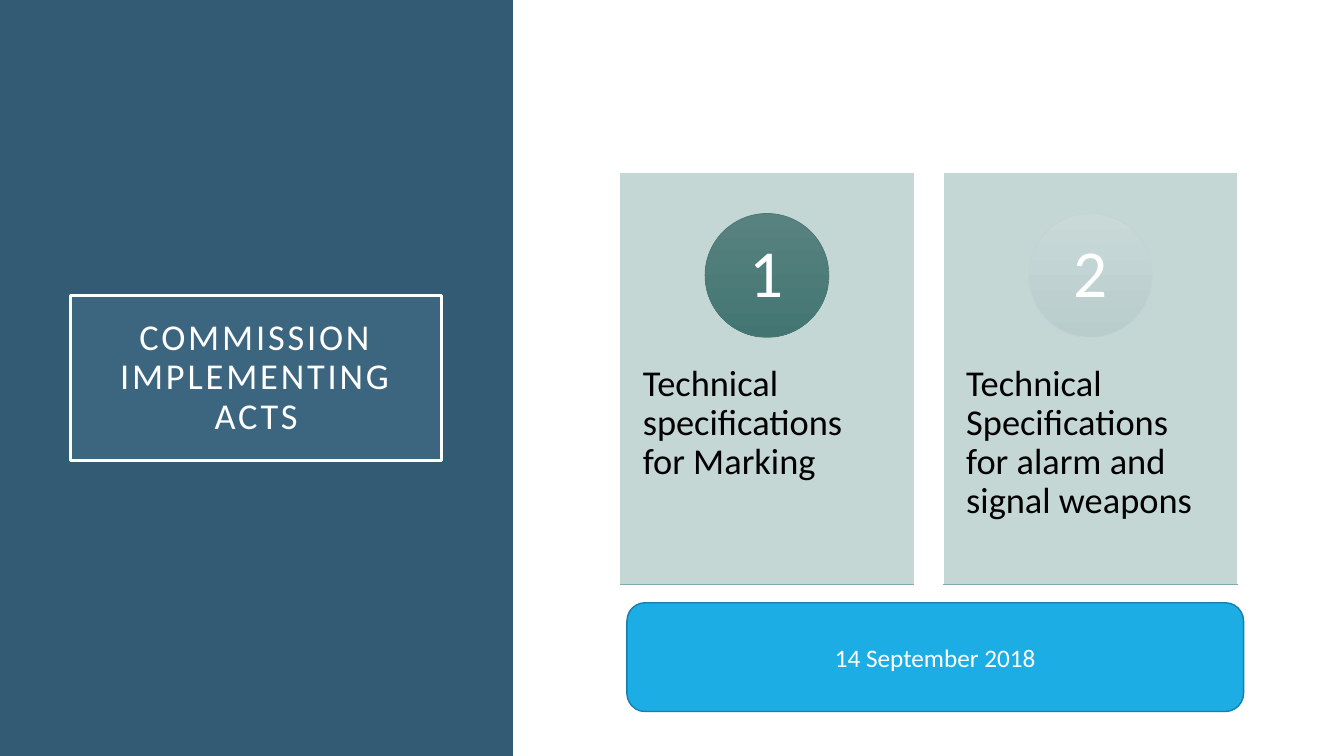
import pptx
import pptx.util
import pptx.dml.color
import pptx.enum.shapes
import pptx.enum.text
import pptx.oxml.ns
from lxml import etree

Cm, Pt = pptx.util.Cm, pptx.util.Pt
RGB = pptx.dml.color.RGBColor
KIND = pptx.enum.shapes.MSO_SHAPE
ALIGN = pptx.enum.text.PP_ALIGN
ANCHOR = pptx.enum.text.MSO_ANCHOR
qn = pptx.oxml.ns.qn

TITLE = "COMMISSION IMPLEMENTING ACTS"
DATE = "14 September 2018"
NAVY = RGB(0x33, 0x5B, 0x74)
STEEL = RGB(0x70, 0xA1, 0xC0)
SAGE = RGB(0xBE, 0xD3, 0xD1)
TEAL = RGB(0x7F, 0xAC, 0xA9)
BLUE = RGB(0x1C, 0xAD, 0xE4)
EDGE = RGB(0x15, 0x80, 0xA9)
WHITE = RGB(0xFF, 0xFF, 0xFF)
BLACK = RGB(0, 0, 0)

# number, text, badge top colour, badge bottom colour, badge outline
CARDS = [
    ("1", "Technical specifications for Marking",
     RGB(0x58, 0x82, 0x7F), RGB(0x43, 0x76, 0x73), RGB(0x49, 0x79, 0x76)),
    ("2", "Technical Specifications for alarm and signal weapons",
     RGB(0xC9, 0xD9, 0xD8), RGB(0xB8, 0xCD, 0xCC), RGB(0xC2, 0xD4, 0xD3)),
]
LEFT, TOP, WIDE, HIGH, STEP = 15.62, 4.34, 7.42, 10.39, 8.15
BADGE, DROP = 3.12, 1.04

deck = pptx.Presentation()
deck.slide_width, deck.slide_height = Cm(33.87), Cm(19.05)
slide = deck.slides.add_slide(deck.slide_layouts[5])


def paint(shape, color, alpha=None):
    """Fill a shape with a colour, see-through if alpha (percent) is given."""
    shape.fill.solid()
    shape.fill.fore_color.rgb = color
    if alpha:
        node = shape.fill._xPr.find(qn("a:solidFill"))[0]
        etree.SubElement(node, qn("a:alpha"), val=str(alpha * 1000))


def edge(shape, color, width):
    shape.line.color.rgb = color
    shape.line.width = Pt(width)


def add(kind, x, y, w, h):
    shape = slide.shapes.add_shape(kind, Cm(x), Cm(y), Cm(w), Cm(h))
    shape.shadow.inherit = False
    return shape


def write(shape, text, size, color, pads, align=ALIGN.CENTER,
          anchor=ANCHOR.MIDDLE, space=0.9):
    """Put one paragraph in a shape; pads are side and top/bottom in cm."""
    frame = shape.text_frame
    frame.word_wrap = True
    frame.auto_size = pptx.enum.text.MSO_AUTO_SIZE.NONE
    frame.vertical_anchor = anchor
    frame.margin_left = frame.margin_right = Cm(pads[0])
    frame.margin_top, frame.margin_bottom = Cm(pads[1]), Cm(pads[-1])
    frame.text = text
    para = frame.paragraphs[0]
    para.alignment, para.line_spacing = align, space
    para.font.name, para.font.size = "Calibri", Pt(size)
    para.font.color.rgb = color
    return para


panel = add(KIND.RECTANGLE, 0, 0, 12.93, 19.05)
paint(panel, NAVY)
panel.line.fill.background()

title = slide.shapes.title
title._element.addprevious(panel._element)
title.left, title.top = Cm(1.78), Cm(7.44)
title.width, title.height = Cm(9.35), Cm(4.17)
paint(title, STEEL, 15)
edge(title, WHITE, 2.5)
para = write(title, TITLE, 26, WHITE, (0.51, 0.51))
para.runs[0].font._element.set("spc", "200")

for i, (num, text, light, dark, rim) in enumerate(CARDS):
    x = LEFT + i * STEP
    card = add(KIND.RECTANGLE, x, TOP, WIDE, HIGH)
    paint(card, SAGE, 90)
    edge(card, WHITE, 0.5)
    write(card, text, 26, BLACK, (0.58, 4.85, 0.91), ALIGN.LEFT, ANCHOR.TOP)

    badge = add(KIND.OVAL, x + (WIDE - BADGE) / 2, TOP + DROP, BADGE, BADGE)
    badge.fill.gradient()
    badge.fill.gradient_angle = 270
    for stop, color in zip(badge.fill.gradient_stops, (light, dark)):
        stop.color.rgb = color
    edge(badge, rim, 0.5)
    write(badge, num, 48, WHITE, (0.25, 0.03))

    base = Cm(TOP + HIGH)
    rule = slide.shapes.add_connector(
        pptx.enum.shapes.MSO_CONNECTOR.STRAIGHT, Cm(x), base, Cm(x + WIDE), base)
    edge(rule, TEAL, 0.5)
    etree.SubElement(rule._element.spPr, qn("a:effectLst"))

banner = add(KIND.ROUNDED_RECTANGLE, 15.8, 15.19, 15.54, 2.74)
paint(banner, BLUE)
edge(banner, EDGE, 1)
write(banner, DATE, 18, WHITE, (0.25, 0.13), space=1.0)

deck.save("out.pptx")
